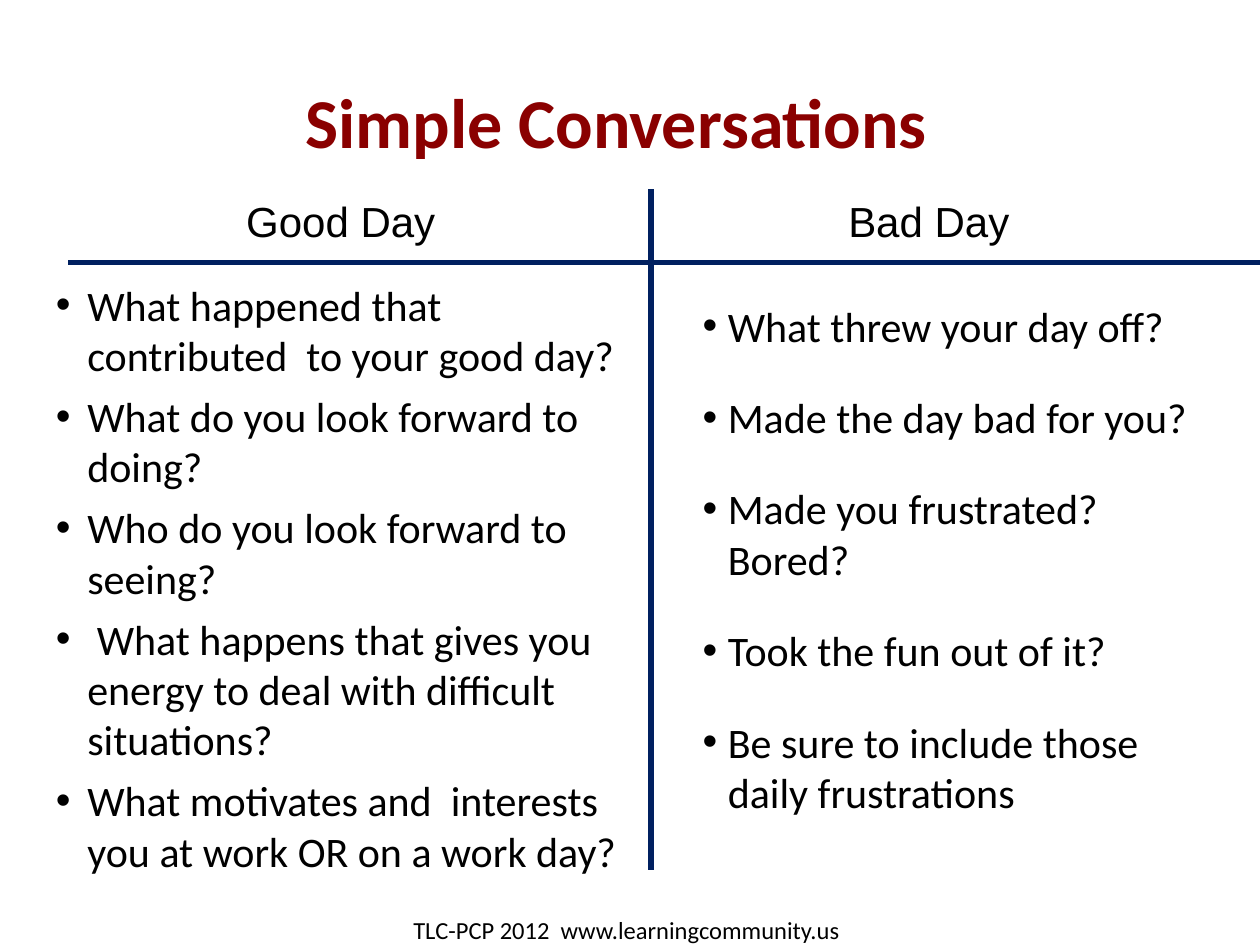
from lxml import etree
from pptx import Presentation
from pptx.dml.color import RGBColor
from pptx.enum.shapes import MSO_CONNECTOR as Connector
from pptx.enum.text import MSO_ANCHOR as Anchor, PP_ALIGN as Align
from pptx.oxml.ns import qn
from pptx.util import Pt

BLACK, NAVY, MAROON = "000000", "002060", "8A0000"

GOOD_DAY = [
    "What happened that contributed  to your good day?",
    "What do you look forward to doing?",
    "Who do you look forward to seeing?",
    " What happens that gives you energy to deal with difficult situations?",
    "What motivates and  interests you at work OR on a work day?",
]
BAD_DAY = [
    "What threw your day off?",
    "Made the day bad for you?",
    "Made you frustrated?  Bored?",
    "Took the fun out of it?",
    "Be sure to include those daily frustrations",
]


def color(value):
    return RGBColor.from_string(value)


def apply(target, formats):
    for name, value in formats.items():
        setattr(target, name, value)


def format_font(font, tint=BLACK, **formats):
    apply(font, formats)
    font.color.rgb = color(tint)


def place(shape, box):
    apply(shape, dict(zip(("left", "top", "width", "height"), map(Pt, box))))


def add_frame(slide, box, side_inset=7.2):
    frame = slide.shapes.add_textbox(*map(Pt, box)).text_frame
    apply(frame, {
        "word_wrap": True,
        "margin_left": Pt(side_inset), "margin_right": Pt(side_inset),
        "margin_top": Pt(3.6), "margin_bottom": Pt(3.6),
    })
    return frame


def add_title(slide, box, text):
    title = slide.shapes.title
    place(title, box)
    frame = title.text_frame
    frame.text = text
    frame.vertical_anchor = Anchor.MIDDLE
    heading = frame.paragraphs[0]
    heading.alignment = Align.CENTER
    format_font(heading.font, MAROON, name="Calibri", size=Pt(40), bold=True)


def add_centered_line(slide, box, text, font_name, size):
    line = add_frame(slide, box).paragraphs[0]
    line.text = text
    line.alignment = Align.CENTER
    format_font(line.font, name=font_name, size=Pt(size))


def add_bullets(slide, box, questions, hang, gap):
    frame = add_frame(slide, box, 7.9)
    for index, question in enumerate(questions):
        item = frame.add_paragraph() if index else frame.paragraphs[0]
        item.text = question
        properties = item._p.get_or_add_pPr()
        properties.set("marL", str(Pt(18)))
        properties.set("indent", str(-Pt(hang)))
        item.space_after = Pt(gap)
        etree.SubElement(properties, qn("a:buFont"), typeface="Arial")
        etree.SubElement(properties, qn("a:buChar"), char="•")
        format_font(item.font, name="Calibri", size=Pt(24))


def add_rule(slide, start, end):
    rule = slide.shapes.add_connector(Connector.STRAIGHT, *map(Pt, start + end))
    rule.line.color.rgb = color(NAVY)
    rule.line.width = Pt(3)
    etree.SubElement(rule._element.spPr, qn("a:effectLst"))


def add_divider(slide, box, crossing_x, crossing_y):
    left, top, width, height = box
    add_rule(slide, (crossing_x, top), (crossing_x, top + height))
    add_rule(slide, (left, crossing_y), (left + width, crossing_y))


def main():
    deck = Presentation()
    deck.slide_width, deck.slide_height = Pt(720), Pt(540)
    slide = deck.slides.add_slide(deck.slide_layouts[5])

    add_title(slide, (30, 36, 644.4, 66), "Simple Conversations")
    add_divider(slide, (39, 108, 681, 389), 372, 150)
    add_centered_line(slide, (24, 108, 348, 36), "Good Day ", "Arial", 24)
    add_centered_line(slide, (372, 108, 317.5, 36), "Bad Day", "Arial", 24)
    add_bullets(slide, (24, 156, 355.7, 352), GOOD_DAY, hang=18, gap=6)
    add_bullets(slide, (390, 168, 301.7, 313), BAD_DAY, hang=14.4, gap=23.4)
    add_centered_line(slide, (0, 519.5, 716, 28),
                      "TLC-PCP 2012  www.learningcommunity.us", "Calibri", 14)
    deck.save("out.pptx")


if __name__ == "__main__":
    main()
